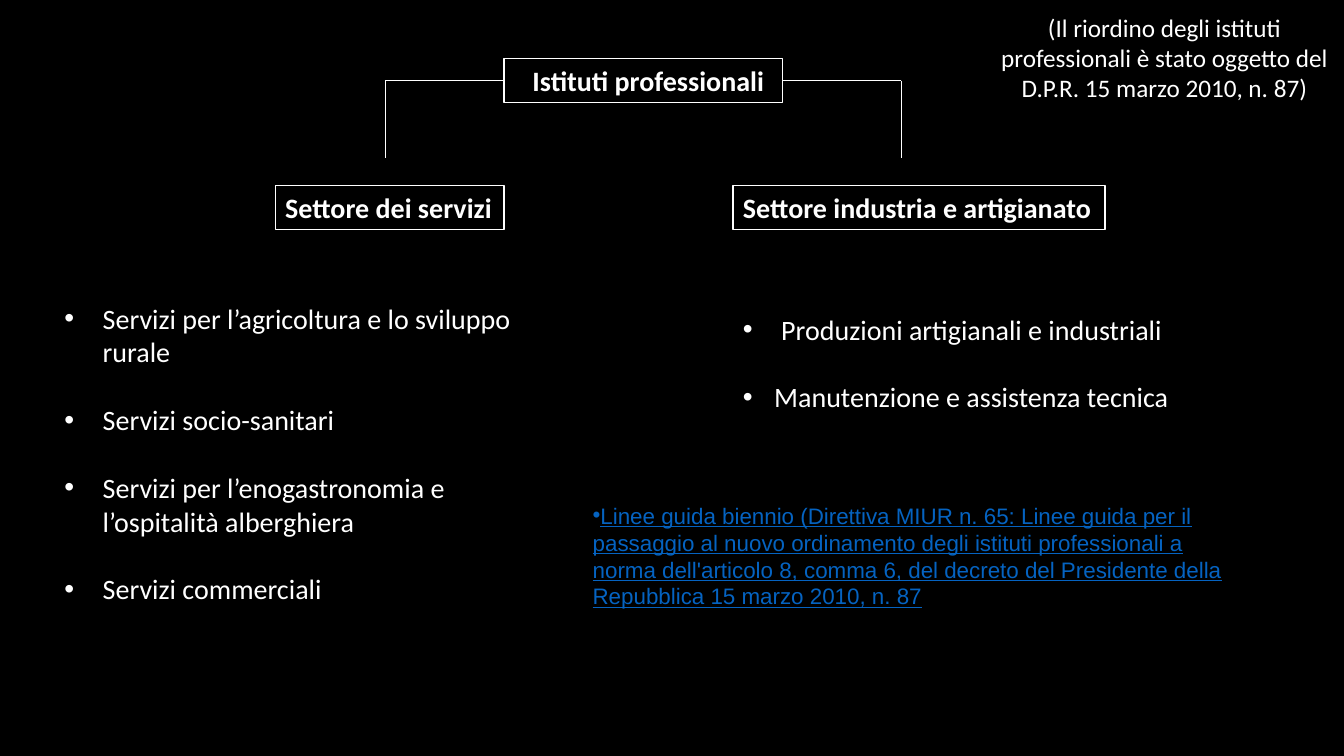
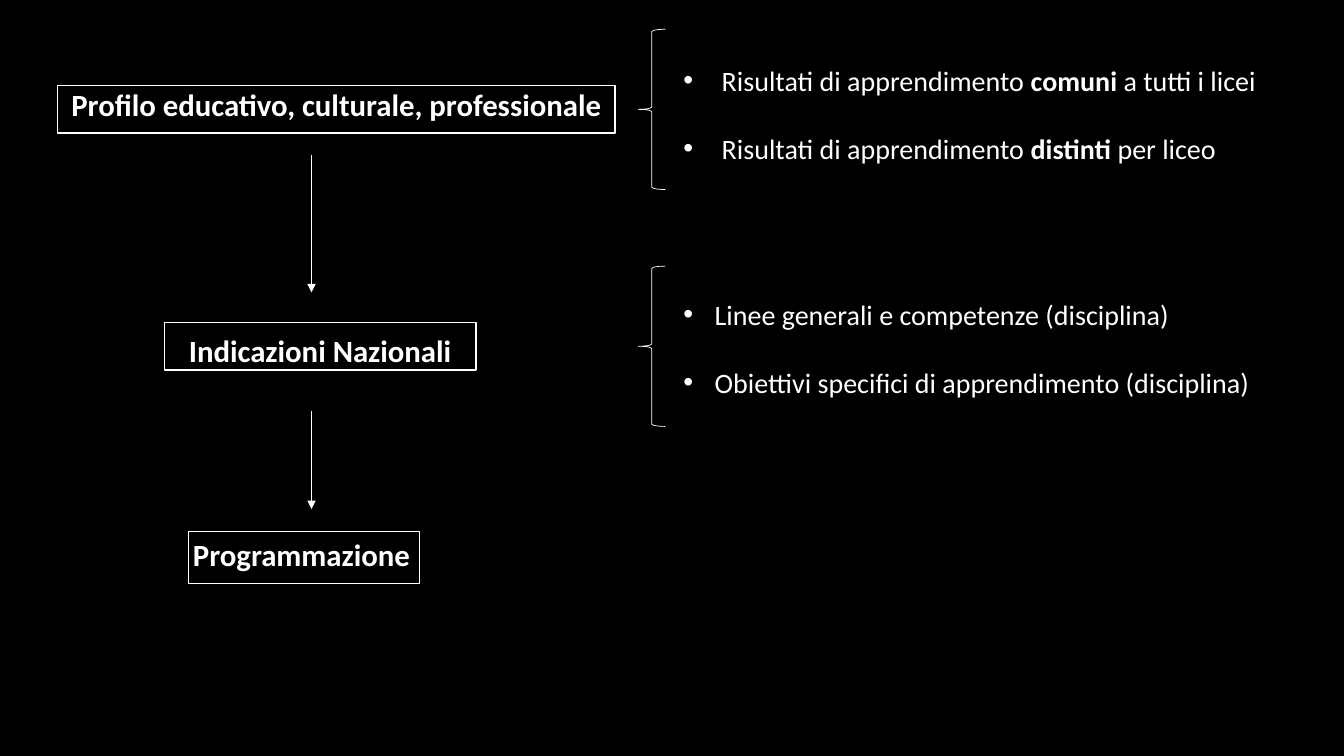
import pptx
import pptx.dml.color
import pptx.enum.shapes
import pptx.enum.text
import pptx.oxml
import pptx.oxml.ns
import pptx.util

Inches = pptx.util.Inches
Pt = pptx.util.Pt
SHAPE = pptx.enum.shapes.MSO_SHAPE
ALIGN = pptx.enum.text.PP_ALIGN

BLACK, WHITE, LINK_BLUE = "000000", "FFFFFF", "0563C1"
TITLE_ONLY = 5


def colour(hex_code):
    return pptx.dml.color.RGBColor.from_string(hex_code)


def add_xml(parent, tag, **attributes):
    element = pptx.oxml.parse_xml(f"<a:{tag} {pptx.oxml.ns.nsdecls('a')}/>")
    for name, value in attributes.items():
        element.set(name, value)
    parent.append(element)


def write(para, text, size=20, font="Calibri", ink=WHITE, bold=False, underline=False):
    """Fill a paragraph; parts between asterisks are bold."""
    for index, part in enumerate(text.split("*")):
        span = para.add_run()
        span.text = part
        span.font.size = Pt(size)
        span.font.name = font
        span.font.bold = bold or index % 2 == 1
        span.font.underline = underline
        span.font.color.rgb = colour(ink)


class Diagram:
    def __init__(self):
        self.deck = pptx.Presentation()
        self.deck.slide_width = Inches(13.33)
        self.deck.slide_height = Inches(7.5)
        fill = self.deck.slide_master.background.fill
        fill.solid()
        fill.fore_color.rgb = colour(BLACK)
        self.page = None

    def new_page(self):
        self.page = self.deck.slides.add_slide(self.deck.slide_layouts[TITLE_ONLY])

    def outline(self, shape, width):
        shape.line.color.rgb = colour(WHITE)
        shape.line.width = Pt(width)

    def prepare_frame(self, box, insets=(0.1, 0.05, 0.1)):
        """Set wrapping, top anchor and left, top, right insets."""
        frame = box.text_frame
        frame.word_wrap = True
        frame.auto_size = pptx.enum.text.MSO_AUTO_SIZE.NONE
        frame.vertical_anchor = pptx.enum.text.MSO_ANCHOR.TOP
        frame.margin_left, frame.margin_top, frame.margin_right = map(Inches, insets)
        frame.margin_bottom = 0
        return frame

    def label(self, box, text, size, align, insets):
        box.shadow.inherit = False
        box.fill.background()
        self.outline(box, 1)
        para = self.prepare_frame(box, insets).paragraphs[0]
        para.alignment = align
        write(para, text, size=size, bold=True)

    def title(self, text, left, top, width, height, size=20, insets=(0.1, 0.05, 0.1)):
        box = self.page.shapes.title
        box.left, box.top, box.width, box.height = map(Inches, (left, top, width, height))
        self.label(box, text, size, ALIGN.CENTER, insets)

    def framed(self, text, left, top, width, height, size=20, align=ALIGN.CENTER,
               insets=(0.1, 0.05, 0.1)):
        box = self.page.shapes.add_shape(
            SHAPE.RECTANGLE, *map(Inches, (left, top, width, height)))
        self.label(box, text, size, align, insets)

    def text(self, items, left, top, width, height, align=ALIGN.LEFT, bullet=False,
             indent=0, gap=0, **style):
        box = self.page.shapes.add_textbox(*map(Inches, (left, top, width, height)))
        frame = self.prepare_frame(box)
        for index, item in enumerate(items):
            para = frame.add_paragraph() if index else frame.paragraphs[0]
            para.alignment = align
            para.space_after = Pt(gap)
            if bullet:
                properties = para._p.get_or_add_pPr()
                properties.set("marL", str(Inches(indent)))
                properties.set("indent", str(-Inches(indent)))
                add_xml(properties, "buFont", typeface="Arial")
                add_xml(properties, "buChar", char="•")
            write(para, item, **style)

    def bullets(self, items, left, top, width, height, indent=0.38):
        self.text(items, left, top, width, height, bullet=True, indent=indent, gap=24.4)

    def line(self, start, end, arrow=False):
        connector = self.page.shapes.add_connector(
            pptx.enum.shapes.MSO_CONNECTOR.STRAIGHT, *map(Inches, (*start, *end)))
        self.outline(connector, 0.5)
        if arrow:
            add_xml(connector.line._get_or_add_ln(), "tailEnd", type="triangle")
        add_xml(connector._element.spPr, "effectLst")

    def brace(self, left, top, width, height):
        shape = self.page.shapes.add_shape(
            SHAPE.LEFT_BRACE, *map(Inches, (left, top, width, height)))
        shape.shadow.inherit = False
        shape.fill.background()
        self.outline(shape, 0.5)


def add_institutes(diagram):
    diagram.new_page()
    diagram.title("Istituti professionali", 5, 0.58, 2.76, 0.44, insets=(0.2, 0.05, 0.1))
    for title_edge, branch in ((5, 3.82), (7.76, 8.94)):
        diagram.line((title_edge, 0.8), (branch, 0.8))
        diagram.line((branch, 0.8), (branch, 1.57))
    for sector, left, width in (("Settore dei servizi", 2.73, 2.27),
                                ("Settore industria e artigianato", 7.27, 3.69)):
        diagram.framed(sector, left, 1.84, width, 0.44, align=ALIGN.LEFT,
                       insets=(0.1, 0.05, 0))
    diagram.bullets(["Servizi per l’agricoltura e lo sviluppo rurale",
                     "Servizi socio-sanitari",
                     "Servizi per l’enogastronomia e l’ospitalità alberghiera",
                     "Servizi commerciali"], 0.54, 2.94, 5.11, 3.13)
    for product, top, indent in (("Produzioni artigianali e industriali", 3.05, 0.38),
                                 ("Manutenzione e assistenza tecnica", 3.72, 0.31)):
        diagram.bullets([product], 7.27, top, 4.49, 0.44, indent=indent)
    diagram.text(["(Il riordino degli istituti professionali è stato oggetto del "
                  "D.P.R. 15 marzo 2010, n. 87)"],
                 9.77, 0.07, 3.56, 1.01, align=ALIGN.CENTER, size=18)
    diagram.text(["Linee guida biennio (Direttiva MIUR n. 65: Linee guida per il passaggio "
                  "al nuovo ordinamento degli istituti professionali a norma "
                  "dell'articolo 8, comma 6, del decreto del Presidente della Repubblica "
                  "15 marzo 2010, n. 87"],
                 5.78, 4.93, 6.67, 1.18, bullet=True, size=16, font="Arial",
                 ink=LINK_BLUE, underline=True)


def add_planning(diagram):
    diagram.new_page()
    diagram.title("Profilo educativo, culturale, professionale", 0.57, 0.85, 5.53, 0.47,
                  size=22, insets=(0.05, 0, 0.05))
    diagram.framed("Indicazioni Nazionali", 1.63, 3.2, 3.09, 0.47, size=22,
                   insets=(0.1, 0.09, 0.1))
    diagram.framed("Programmazione", 1.87, 5.27, 2.29, 0.52, size=22,
                   insets=(0, 0.05, 0.05))
    for top, bottom in ((1.54, 2.9), (4.08, 5.05)):
        diagram.line((3.09, top), (3.09, bottom), arrow=True)
    for top in (0.29, 2.64):
        diagram.brace(6.33, top, 0.27, 1.59)
    diagram.bullets(["Risultati di apprendimento *comuni* a tutti i licei",
                     "Risultati di apprendimento *distinti *per liceo"],
                    6.68, 0.58, 6.48, 1.11)
    diagram.bullets(["Linee generali e competenze (disciplina)",
                     "Obiettivi specifici di apprendimento (disciplina)"],
                    6.68, 2.9, 6.11, 1.11, indent=0.31)


def main():
    diagram = Diagram()
    add_institutes(diagram)
    add_planning(diagram)
    diagram.deck.save("out.pptx")


if __name__ == "__main__":
    main()
